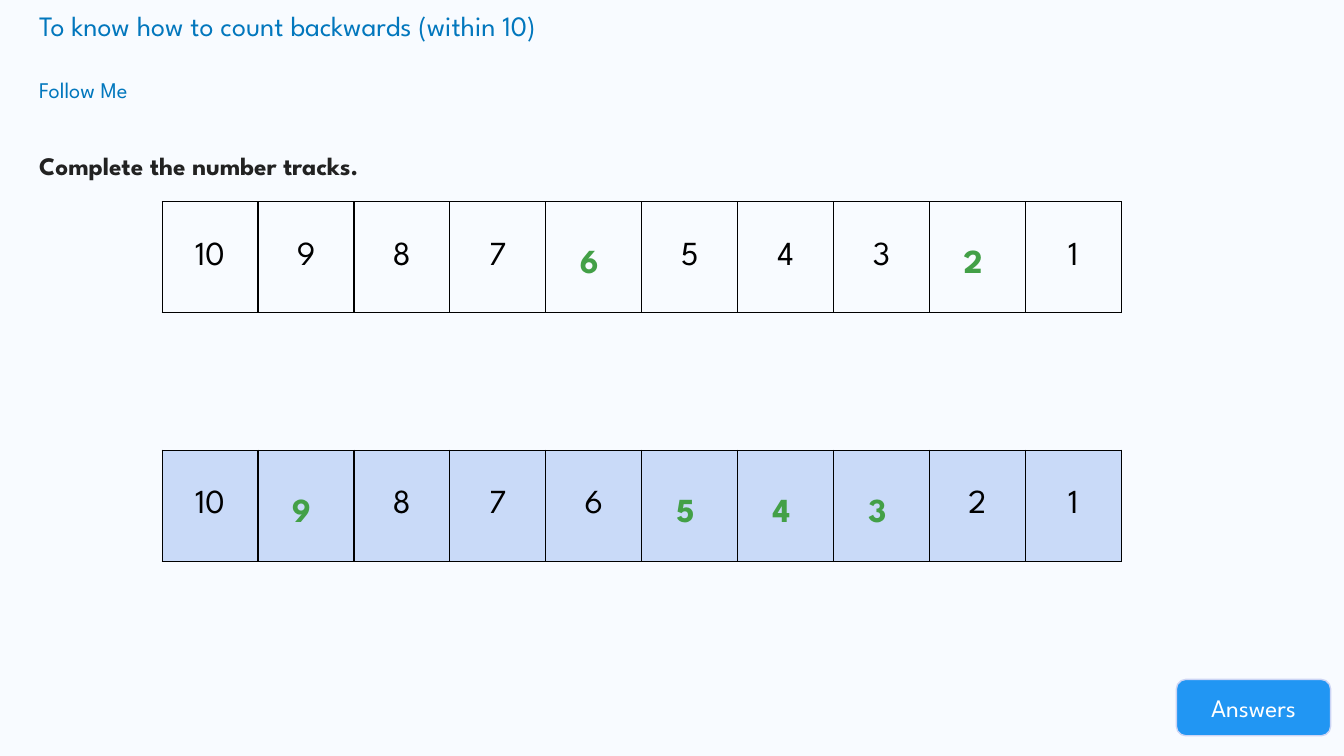
from dataclasses import dataclass

from lxml.etree import SubElement
from pptx import Presentation
from pptx.dml.color import RGBColor as Color
from pptx.enum.shapes import MSO_SHAPE as Preset
from pptx.enum.text import MSO_ANCHOR as Anchor, PP_ALIGN as Align
from pptx.oxml.ns import qn
from pptx.util import Pt


@dataclass(frozen=True)
class Theme:
    font: str = "League Spartan"
    background: str = "F8FBFF"
    heading: str = "0277BD"
    text: str = "222222"
    number: str = "000000"
    answer: str = "43A047"
    track_fill: str = "C9DAF8"
    button: str = "2196F3"
    button_line: str = "CCD4F4"
    button_text: str = "FFFFFF"
    title_size: int = 20
    subtitle_size: int = 16
    body_size: int = 18
    number_size: int = 24


THEME = Theme()
HEADINGS = [
    ("To know how to count backwards (within 10)", (20.9, 2.9, 888.5, 31.7),
     THEME.title_size, THEME.heading, False, 1.0),
    ("Follow Me", (20.9, 51.1, 213.8, 33.1),
     THEME.subtitle_size, THEME.heading, False, 1.0),
    ("Complete the number tracks.", (20.9, 92.9, 924.5, 40.3),
     THEME.body_size, THEME.text, True, 1.5),
]
NUMBERS = list(range(10, 0, -1))
TRACKS = [
    {"top": 144, "fill": None, "answers": [6, 2]},
    {"top": 321.6, "fill": THEME.track_fill, "answers": [9, 5, 4, 3]},
]
BUTTON = ("Answers", (840.3, 485.3, 110.2, 40.3))
TRACK_LEFT, CELL_WIDTH, CELL_HEIGHT = 115.8, 68.54, 79.2


def points(place):
    return [Pt(value) for value in place]


def write(frame, text, size, color, bold=False, spacing=1.0, align=Align.LEFT):
    frame.word_wrap = True
    frame.text = text
    para = frame.paragraphs[0]
    para.alignment = align
    para.line_spacing = spacing
    font = para.runs[0].font
    font.name = THEME.font
    font.size = Pt(size)
    font.bold = bold
    font.color.rgb = Color.from_string(color)


def add_borders(cell):
    properties = cell._tc.get_or_add_tcPr()
    for side in ("a:lnL", "a:lnR", "a:lnT", "a:lnB"):
        line = SubElement(properties, qn(side), w=str(Pt(1)))
        fill = SubElement(line, qn("a:solidFill"))
        SubElement(fill, qn("a:srgbClr"), val=THEME.number)


def add_track(page, track):
    width = CELL_WIDTH * len(NUMBERS)
    place = (TRACK_LEFT, track["top"], width, CELL_HEIGHT)
    table = page.shapes.add_table(1, len(NUMBERS), *points(place)).table
    table.first_row = False
    table.horz_banding = False
    for index, number in enumerate(NUMBERS):
        table.columns[index].width = Pt(CELL_WIDTH)
        cell = table.cell(0, index)
        cell.vertical_anchor = Anchor.MIDDLE
        add_borders(cell)
        if track["fill"]:
            cell.fill.solid()
            cell.fill.fore_color.rgb = Color.from_string(track["fill"])
        else:
            cell.fill.background()
        if number not in track["answers"]:
            write(cell.text_frame, str(number), THEME.number_size,
                  THEME.number, align=Align.CENTER)


def add_answers(page, track):
    for number in track["answers"]:
        left = TRACK_LEFT + NUMBERS.index(number) * CELL_WIDTH
        place = (left, track["top"], CELL_WIDTH, CELL_HEIGHT)
        frame = page.shapes.add_textbox(*points(place)).text_frame
        frame.margin_top = frame.margin_bottom = Pt(7.2)
        frame.vertical_anchor = Anchor.MIDDLE
        write(frame, f"{number} ", THEME.number_size, THEME.answer,
              bold=True, spacing=1.15, align=Align.CENTER)


def add_button(page):
    text, place = BUTTON
    button = page.shapes.add_shape(Preset.ROUNDED_RECTANGLE, *points(place))
    button.adjustments[0] = 0.17
    button.shadow.inherit = False
    button.fill.solid()
    button.fill.fore_color.rgb = Color.from_string(THEME.button)
    button.line.color.rgb = Color.from_string(THEME.button_line)
    button.line.width = Pt(1)
    button.text_frame.vertical_anchor = Anchor.MIDDLE
    write(button.text_frame, text, THEME.body_size, THEME.button_text,
          align=Align.CENTER)


def main():
    deck = Presentation()
    deck.slide_width, deck.slide_height = Pt(960), Pt(540)
    page = deck.slides.add_slide(deck.slide_layouts[6])
    page.background.fill.solid()
    page.background.fill.fore_color.rgb = Color.from_string(THEME.background)
    for text, place, size, color, bold, spacing in HEADINGS:
        box = page.shapes.add_textbox(*points(place))
        write(box.text_frame, text, size, color, bold, spacing)
    add_button(page)
    for track in TRACKS:
        add_track(page, track)
    for track in TRACKS:
        add_answers(page, track)
    deck.save("out.pptx")


if __name__ == "__main__":
    main()
